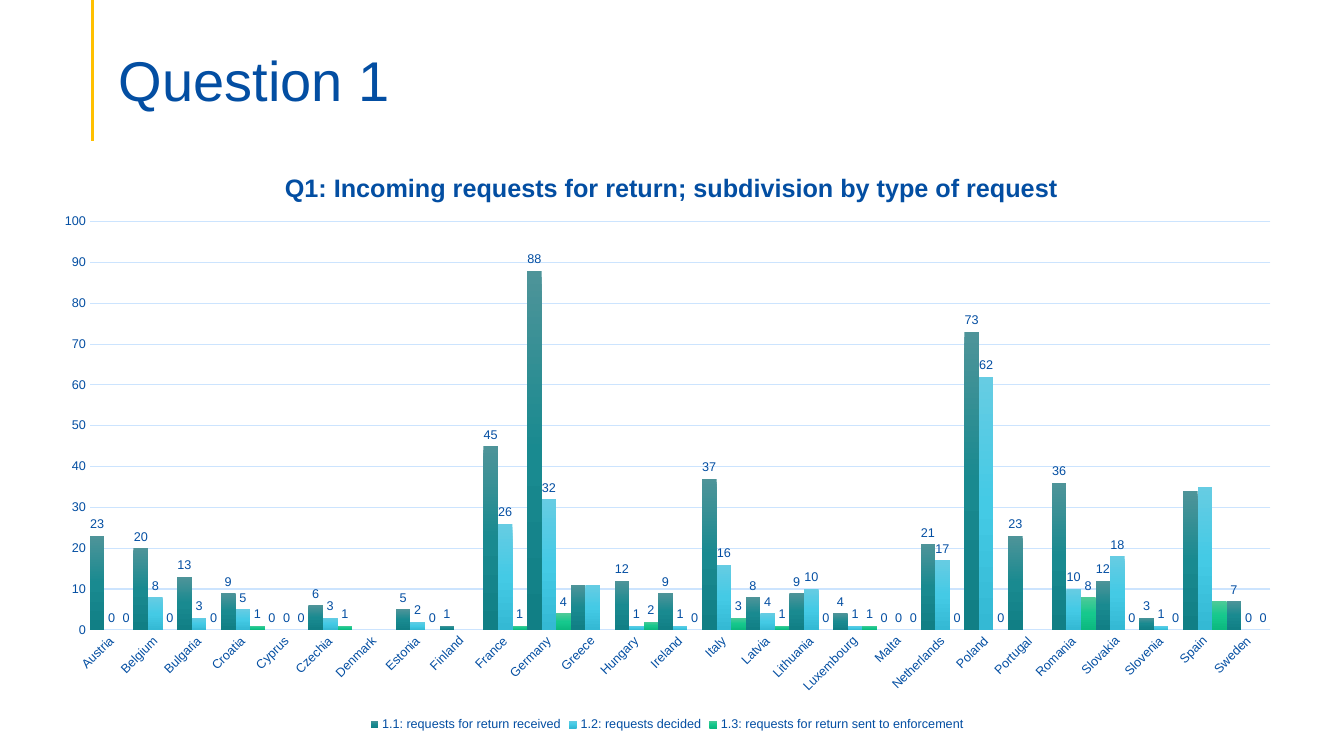
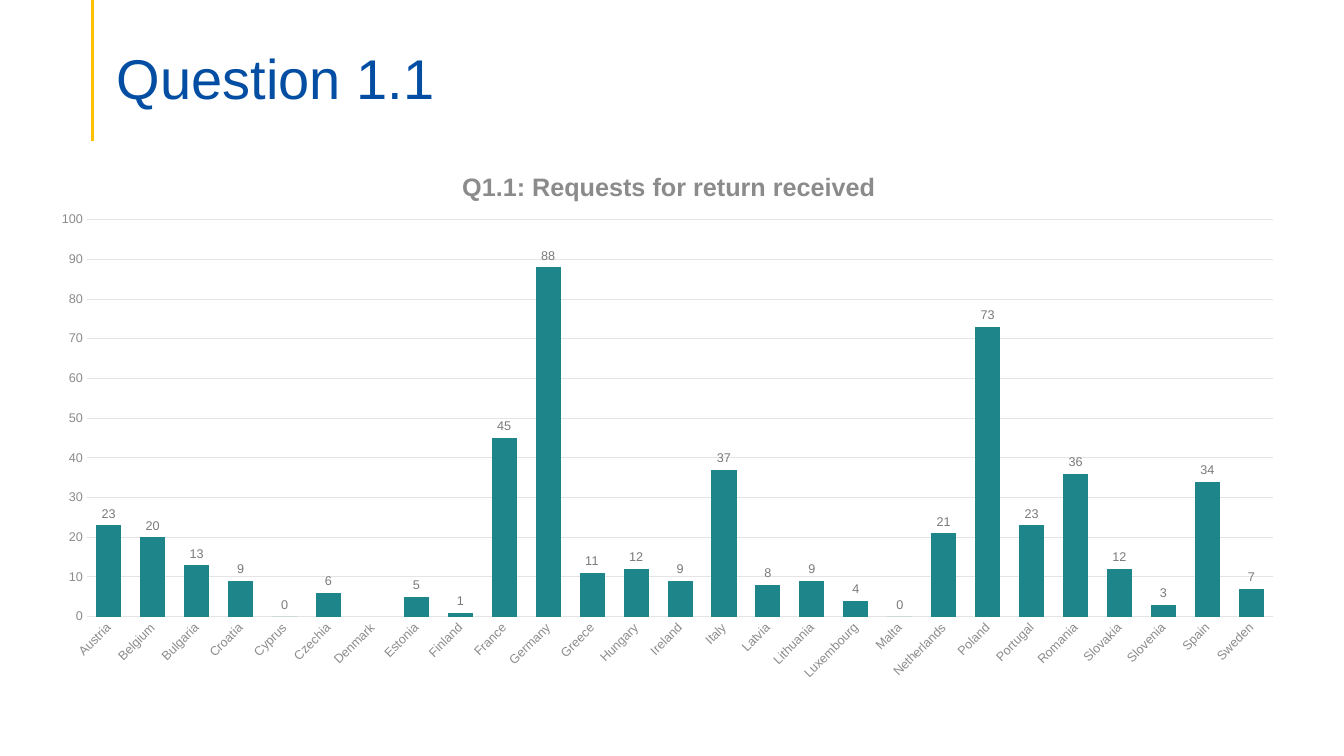
from dataclasses import dataclass
from typing import Optional

from pptx import Presentation
from pptx.chart.data import CategoryChartData
from pptx.dml.color import RGBColor
from pptx.enum.chart import XL_CHART_TYPE, XL_LABEL_POSITION, XL_LEGEND_POSITION, XL_TICK_MARK
from pptx.enum.shapes import MSO_CONNECTOR
from pptx.enum.text import MSO_ANCHOR, MSO_AUTO_SIZE, PP_ALIGN
from pptx.oxml import parse_xml
from pptx.oxml.ns import nsdecls, qn
from pptx.util import Inches, Pt

CLUSTERED = XL_CHART_TYPE.COLUMN_CLUSTERED
OUTSIDE_END = XL_LABEL_POSITION.OUTSIDE_END
BOTTOM = XL_LEGEND_POSITION.BOTTOM
NO_TICK = XL_TICK_MARK.NONE
STRAIGHT = MSO_CONNECTOR.STRAIGHT
MIDDLE = MSO_ANCHOR.MIDDLE
LEFT = PP_ALIGN.LEFT
NO_AUTOFIT = MSO_AUTO_SIZE.NONE

FONT = "Arial"
BLUE, YELLOW, GREY = "034EA2", "FFC000", "8B8B8B"
TITLE_ONLY = 5

COUNTRIES = [
    "Austria", "Belgium", "Bulgaria", "Croatia", "Cyprus", "Czechia", "Denmark",
    "Estonia", "Finland", "France", "Germany", "Greece", "Hungary", "Ireland",
    "Italy", "Latvia", "Lithuania", "Luxembourg", "Malta", "Netherlands", "Poland",
    "Portugal", "Romania", "Slovakia", "Slovenia", "Spain", "Sweden",
]
RECEIVED = [23, 20, 13, 9, 0, 6, None, 5, 1, 45, 88, 11, 12, 9, 37, 8, 9, 4, 0,
            21, 73, 23, 36, 12, 3, 34, 7]
DECIDED = [0, 8, 3, 5, 0, 3, None, 2, 0, 26, 32, 11, 1, 1, 16, 4, 10, 1, 0,
           17, 62, None, 10, 18, 1, 35, 0]
ENFORCED = [0, 0, 0, 1, 0, 1, None, 0, 0, 1, 4, 0, 2, 0, 3, 1, 0, 1, 0,
            0, 0, None, 8, 0, 0, 7, 0]


@dataclass
class Box:
    left: float
    top: float
    width: float
    height: float

    def lengths(self) -> tuple:
        return tuple(Inches(v) for v in (self.left, self.top, self.width, self.height))


@dataclass
class Series:
    name: str
    values: list
    colors: tuple  # one colour, or the evenly spaced stops of a gradient
    unlabelled: tuple = ()


@dataclass
class ChartSlide:
    title: str
    title_box: Box
    chart_title: str
    chart_title_at: tuple
    chart_box: Box
    plot_box: Box
    series: list
    text_color: str
    label_color: str
    grid_color: str
    gap: int
    overlap: int
    legend: bool


SLIDES = [
    ChartSlide(
        "Question 1", Box(1.08, 0.2, 11.5, 1.21),
        "Q1: Incoming requests for return; subdivision by type of request", (2.78, 1.66),
        Box(0.39, 1.41, 12.45, 5.89), Box(0.89, 2.2, 11.71, 4.05),
        [
            Series("1.1: requests for return received", RECEIVED,
                   ("4E9499", "198A90", "117F85"), ("Denmark", "Greece", "Spain")),
            Series("1.2: requests decided", DECIDED,
                   ("66CCE3", "44CAE5", "34B9D4"), ("Denmark", "Finland", "Greece", "Spain")),
            Series("1.3: requests for return sent to enforcement", ENFORCED,
                   ("4ECA98", "16C88D", "0CB97F"), ("Denmark", "Finland", "Greece", "Spain")),
        ],
        BLUE, BLUE, "CCE4FE", gap=0, overlap=0, legend=True),
    ChartSlide(
        "Question 1.1", Box(1.06, 0.16, 11.5, 1.25),
        "Q1.1: Requests for return received", (4.54, 1.65),
        Box(0.37, 1.41, 12.51, 5.46), Box(0.86, 2.18, 11.77, 3.94),
        [Series("Series 1", RECEIVED, ("1E858B",))],
        GREY, "7A7A7A", "E4E4E4", gap=75, overlap=40, legend=False),
]


def rgb(color: str) -> RGBColor:
    return RGBColor.from_string(color)


def style_font(font, size: float, color: str, bold: bool = False) -> None:
    font.name = FONT
    font.size = Pt(size)
    font.bold = bold
    font.color.rgb = rgb(color)


def style_line(line, color: str, width: float) -> None:
    line.color.rgb = rgb(color)
    line.width = Pt(width)


def add_accent_line(s, layout) -> None:
    """Draw the yellow rule and move it to the layout, where all slides share it."""
    line = s.shapes.add_connector(STRAIGHT, Inches(0.92), 0, Inches(0.92), Inches(1.4))
    style_line(line.line, YELLOW, 2.25)
    line.element.spPr.append(parse_xml(f"<a:effectLst {nsdecls('a')}/>"))
    layout.shapes.element.append(line.element)


def set_title(s, text: str, box: Box) -> None:
    title = s.shapes.title
    title.left, title.top, title.width, title.height = box.lengths()
    tf = title.text_frame
    tf.text = text
    tf.word_wrap = True
    tf.auto_size = NO_AUTOFIT
    tf.vertical_anchor = MIDDLE
    tf.margin_bottom = 0
    p = tf.paragraphs[0]
    p.alignment = LEFT
    p.line_spacing = 0.9
    style_font(p.runs[0].font, 40, BLUE)


def place_part(part, index: int, chart_box: Box, left: float, top: float,
               size: Optional[tuple] = None) -> None:
    """Give a chart part a fixed place, stated in slide inches."""
    values = {"x": (left - chart_box.left) / chart_box.width,
              "y": (top - chart_box.top) / chart_box.height}
    target = ""
    if size:
        target = '<c:layoutTarget val="inner"/>'
        values["w"] = size[0] / chart_box.width
        values["h"] = size[1] / chart_box.height
    modes = "".join(f'<c:{k}Mode val="edge"/>' for k in "xy")
    sizes = "".join(f'<c:{k} val="{v:.4f}"/>' for k, v in values.items())
    for old in part.findall(qn("c:layout")):
        part.remove(old)
    part.insert(index, parse_xml(
        f"<c:layout {nsdecls('c')}><c:manualLayout>{target}{modes}{sizes}"
        "</c:manualLayout></c:layout>"))


def fill_series(series, element, colors: tuple) -> None:
    series.invert_if_negative = False
    if len(colors) == 1:
        series.format.fill.solid()
        series.format.fill.fore_color.rgb = rgb(colors[0])
        return
    step = 100000 // (len(colors) - 1)
    stops = "".join(f'<a:gs pos="{i * step}"><a:srgbClr val="{c}"/></a:gs>'
                    for i, c in enumerate(colors))
    series.format.line.fill.background()
    element.find(qn("c:spPr")).insert(0, parse_xml(
        f"<a:gradFill {nsdecls('a')} rotWithShape=\"1\"><a:gsLst>{stops}</a:gsLst>"
        '<a:lin ang="5400000" scaled="0"/></a:gradFill>'))


def label_series(series, element, color: str, unlabelled: tuple) -> None:
    labels = series.data_labels
    labels.show_value = True
    labels.position = OUTSIDE_END
    style_font(labels.font, 9, color)
    for i, country in enumerate(unlabelled):
        element.find(qn("c:dLbls")).insert(i, parse_xml(
            f"<c:dLbl {nsdecls('c')}><c:idx val=\"{COUNTRIES.index(country)}\"/>"
            '<c:delete val="1"/></c:dLbl>'))


def style_axes(chart, spec_: ChartSlide) -> None:
    countries, counts = chart.category_axis, chart.value_axis
    for axis in (countries, counts):
        axis.major_tick_mark = axis.minor_tick_mark = NO_TICK
        style_font(axis.tick_labels.font, 9, spec_.text_color)
    style_line(countries.format.line, spec_.grid_color, 0.75)
    for body in chart.element.xpath(".//c:catAx/c:txPr/a:bodyPr"):
        body.set("rot", "-2700000")
        body.set("vert", "horz")
    counts.minimum_scale, counts.maximum_scale, counts.major_unit = 0, 100, 10
    counts.format.line.fill.background()
    counts.has_major_gridlines = True
    style_line(counts.major_gridlines.format.line, spec_.grid_color, 0.75)


def add_country_chart(s, content: ChartSlide) -> None:
    data = CategoryChartData()
    data.categories = COUNTRIES
    for item in content.series:
        data.add_series(item.name, item.values)
    box, plot_box = content.chart_box, content.plot_box
    chart = s.shapes.add_chart(CLUSTERED, *box.lengths(), data).chart
    style_font(chart.font, 10, "4D4D4D")

    chart.has_title = True
    tf = chart.chart_title.text_frame
    tf.text = content.chart_title
    style_font(tf.paragraphs[0].runs[0].font, 18, content.text_color, bold=True)
    place_part(chart.element.xpath("c:chart/c:title")[0], 1, box, *content.chart_title_at)
    place_part(chart.element.xpath(".//c:plotArea")[0], 0, box,
               plot_box.left, plot_box.top, (plot_box.width, plot_box.height))

    chart.has_legend = content.legend
    if content.legend:
        chart.legend.position = BOTTOM
        chart.legend.include_in_layout = False
        style_font(chart.legend.font, 9, content.text_color)

    style_axes(chart, content)
    plot = chart.plots[0]
    plot.vary_by_categories = False
    plot.gap_width = content.gap
    plot.overlap = content.overlap
    for series, element, item in zip(plot.series, chart.element.xpath(".//c:ser"),
                                     content.series):
        fill_series(series, element, item.colors)
        label_series(series, element, content.label_color, item.unlabelled)


def main() -> None:
    prs = Presentation()
    prs.slide_width, prs.slide_height = Inches(13.33), Inches(7.5)
    layout = prs.slide_layouts[TITLE_ONLY]
    for i, content in enumerate(SLIDES):
        s = prs.slides.add_slide(layout)
        if i == 0:
            add_accent_line(s, layout)
        set_title(s, content.title, content.title_box)
        add_country_chart(s, content)
    prs.save("out.pptx")


if __name__ == "__main__":
    main()
